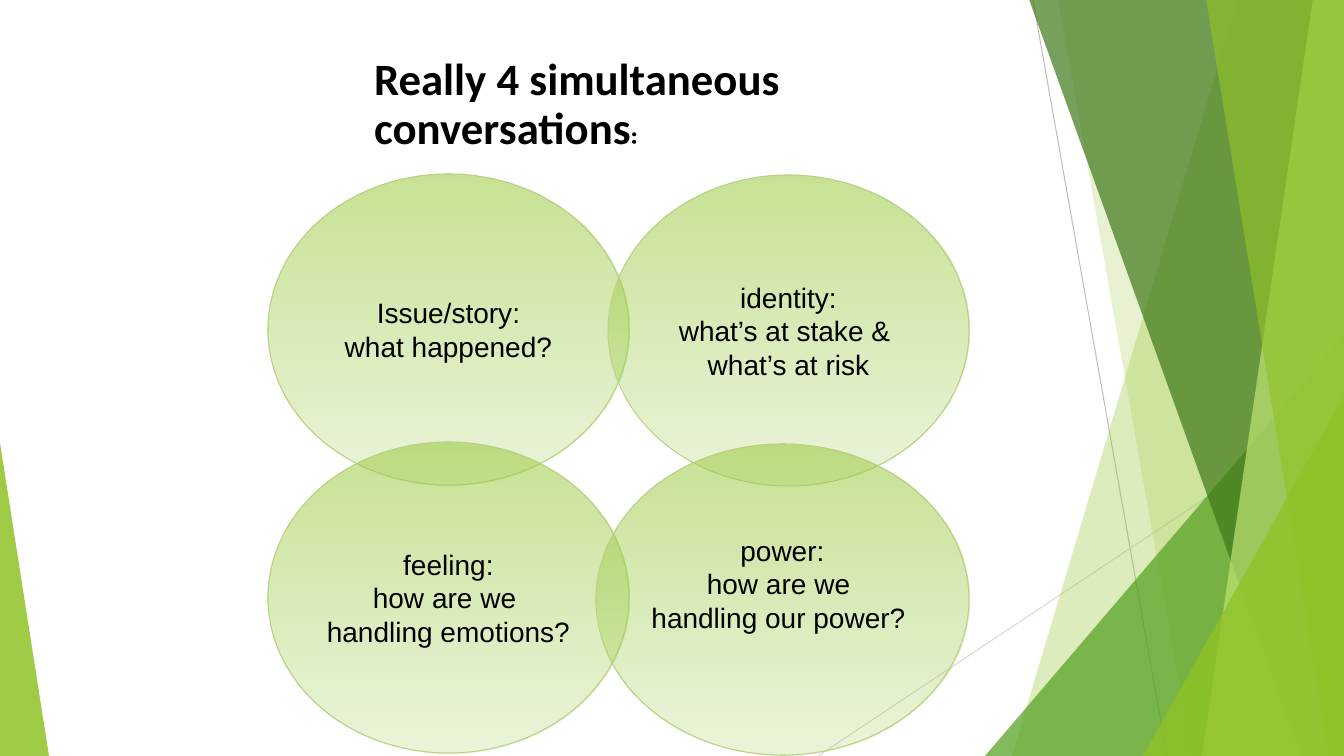
import pptx
import pptx.util
import pptx.dml.color
import pptx.enum.shapes
import pptx.enum.text
import pptx.oxml

THEME = {
    "lime": "90C226", "green": "54A021", "dark": "3F7819", "pale": "C0E474",
    "top": "99CA3C", "base": "9CCB48", "rim": "B9D181", "ink": "000000",
    "near": "BFBFBF", "far": "D9D9D9",
    "head": 32, "colon": 18, "body": 20, "hair": 0.75,
}
SCALE = 914400 / 100.8
WIDE, HIGH = 1344, 756
KIND = pptx.enum.shapes.MSO_SHAPE
ALIGN = pptx.enum.text.PP_ALIGN
ANCHOR = pptx.enum.text.MSO_ANCHOR
Pt = pptx.util.Pt


def px(*marks):
    return [round(mark * SCALE) for mark in marks]


def paint(color, name, shape=None, alpha=100):
    color.rgb = pptx.dml.color.RGBColor.from_string(THEME[name])
    if shape is not None:
        node = shape.element.spPr.xpath(
            f"./a:solidFill/a:srgbClr | ./a:gradFill//a:srgbClr[@val='{THEME[name]}']")[0]
        tag = pptx.oxml.parse_xml(
            '<a:alpha xmlns:a="http://schemas.openxmlformats.org/drawingml/2006/main"'
            f' val="{alpha * 1000}"/>')
        node.append(tag)


deck = pptx.Presentation()
deck.slide_width, deck.slide_height = px(WIDE, HIGH)
slide = deck.slides.add_slide(deck.slide_layouts[5])
shapes = slide.shapes

# Thin lines behind the green panels
for ends, name in [((1033, 0, 1167, HIGH), "near"), ((WIDE, 406, 818, HIGH), "far")]:
    line = shapes.add_connector(pptx.enum.shapes.MSO_CONNECTOR.STRAIGHT, *px(*ends))
    paint(line.line.color, name)
    line.line.width = Pt(THEME["hair"])
    line.element.spPr.append(pptx.oxml.parse_xml(
        '<a:effectLst xmlns:a="http://schemas.openxmlformats.org/drawingml/2006/main"/>'))

# Panels: a band is (top x, bottom x), a triangle is (x, y, width, tip)
panels = [
    ((1238, 1012), "lime", 30),
    ((1058, 1192), "lime", 20),
    ((985, 336, 359, 1), "green", 72),
    ((1029, 1301), "dark", 70),
    ((1313, 1202), "pale", 70),
    ((1206, 1329), "lime", 65),
    ((1143, 396, 201, 1), "lime", 80),
    ((0, 443, 49, 0), "lime", 85),
]
for form, name, alpha in panels:
    if len(form) == 2:
        top, base = form
        pen = shapes.build_freeform(top, -1, scale=SCALE)
        pen.add_line_segments([(WIDE, -1), (WIDE, HIGH), (base, HIGH)], close=True)
        panel = pen.convert_to_shape()
    else:
        left, top, width, tip = form
        panel = shapes.add_shape(KIND.ISOSCELES_TRIANGLE, *px(left, top, width, HIGH - top))
        panel.adjustments[0] = tip
    panel.shadow.inherit = False
    panel.line.fill.background()
    panel.fill.solid()
    paint(panel.fill.fore_color, name, panel, alpha)

# Title
title = shapes.title
title.left, title.top, title.width, title.height = px(364, 52, 530, 108)
frame = title.text_frame
frame.word_wrap = True
frame.auto_size = pptx.enum.text.MSO_AUTO_SIZE.SHAPE_TO_FIT_TEXT
frame.vertical_anchor = ANCHOR.TOP
para = frame.paragraphs[0]
para.alignment = ALIGN.LEFT
para.line_spacing = 0.9
para.font.bold = True
paint(para.font.color, "ink")
for text, face, size in [("Really 4 simultaneous conversations", "Calibri", "head"),
                         (":", "Karla", "colon")]:
    run = para.add_run()
    run.text = text
    run.font.name, run.font.size = face, Pt(THEME[size])

# Four overlapping conversations: place, extra room below the text, lines
talks = [
    ((268, 174, 361), 0, ["Issue/story:", "what happened?"]),
    ((608, 175, 361), 0, ["identity:", "what’s at stake & ", "what’s at risk"]),
    ((268, 442, 361), 0, ["feeling:", "how are we ", "handling emotions?"]),
    ((596, 444, 373), 32, ["power:", "how are we ", "handling our power? "]),
]
for place, room, lines in talks:
    oval = shapes.add_shape(KIND.OVAL, *px(*place, 311))
    oval.shadow.inherit = False
    oval.fill.gradient()
    oval.fill.gradient_angle = 270
    for stop, name, alpha in zip(oval.fill.gradient_stops, ("top", "base"), (55, 20)):
        paint(stop.color, name, oval, alpha)
    paint(oval.line.color, "rim")
    oval.line.width = Pt(THEME["hair"])
    frame = oval.text_frame
    frame.word_wrap = False
    frame.vertical_anchor = ANCHOR.MIDDLE
    frame.margin_bottom = px(5 + room)[0]
    frame.text = "\n".join(lines)
    for para in frame.paragraphs:
        para.alignment = ALIGN.CENTER
        para.font.name, para.font.size = "Arial", Pt(THEME["body"])
        paint(para.font.color, "ink")

deck.save("out.pptx")
